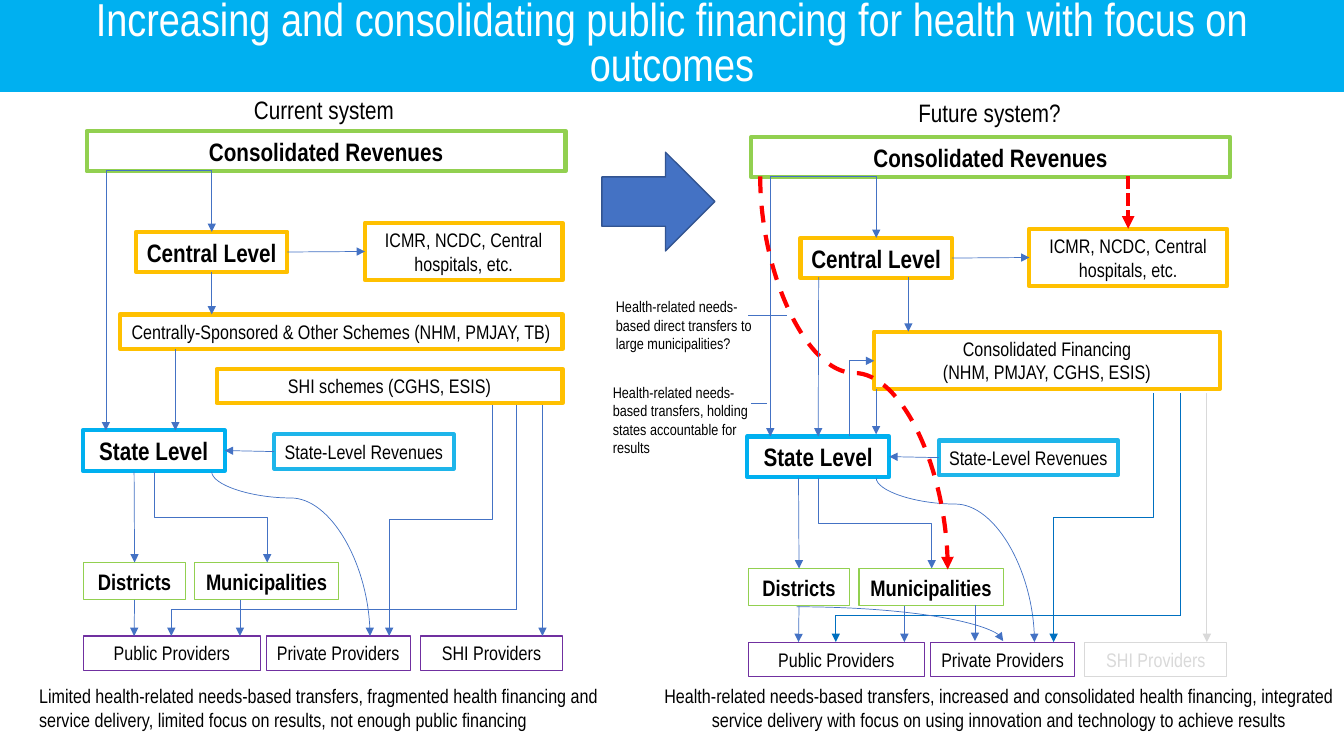
from dataclasses import dataclass
from typing import Any

from lxml.etree import SubElement
from pptx import Presentation
from pptx.dml.color import RGBColor
from pptx.enum.dml import MSO_LINE_DASH_STYLE as Dash
from pptx.enum.shapes import MSO_CONNECTOR as Wire
from pptx.enum.shapes import MSO_SHAPE as Preset
from pptx.enum.text import MSO_ANCHOR as Anchor
from pptx.enum.text import MSO_AUTO_SIZE as AutoSize
from pptx.enum.text import PP_ALIGN as Align
from pptx.oxml.ns import qn
from pptx.util import Inches, Pt

TOP, LEFT, BOTTOM, RIGHT = range(4)


@dataclass(frozen=True)
class Theme:
    font: str = "Arial Narrow"
    text: str = "000000"
    white: str = "FFFFFF"
    banner: str = "00B0F0"
    revenue: str = "92D050"
    central: str = "FFC000"
    state: str = "00B0F0"
    state_revenue: str = "1EB5EA"
    provider: str = "7030A0"
    faded: str = "D9D9D9"
    flow: str = "4472C4"
    arrow_edge: str = "325491"
    pooled_flow: str = "0070C0"
    direct_flow: str = "FF0000"
    title_size: int = 33
    level_size: int = 18
    local_size: int = 16
    body_size: int = 14
    note_size: int = 11
    thin: float = 0.5
    edge: float = 0.75
    thick: float = 3


THEME = Theme()


@dataclass
class Panel:
    page: Any
    dx: float = 0
    dy: float = 0

    def place(self, x, y):
        return Inches(x + self.dx), Inches(y + self.dy)


def color(value):
    return RGBColor.from_string(value)


def write(frame, text, size, ink=THEME.text, bold=False, align=Align.LEFT):
    frame.word_wrap = True
    frame.text = text
    for para in frame.paragraphs:
        para.alignment = align
        para.font.name = THEME.font
        para.font.size = Pt(size)
        para.font.bold = bold
        para.font.color.rgb = color(ink)


def add_title(page, text):
    title = page.shapes.title
    title.left, title.top = Inches(0), Inches(0)
    title.width, title.height = Inches(13.33), Inches(0.91)
    title.fill.solid()
    title.fill.fore_color.rgb = color(THEME.banner)
    title.line.color.rgb = color(THEME.banner)
    title.line.width = Pt(THEME.edge)
    frame = title.text_frame
    write(frame, text, THEME.title_size, THEME.white, align=Align.CENTER)
    frame.auto_size = AutoSize.NONE
    frame.vertical_anchor = Anchor.MIDDLE
    frame.paragraphs[0].line_spacing = 0.8


def add_box(panel, text, area, edge, size=THEME.body_size, bold=False,
            weight=THEME.thick, ink=THEME.text):
    x, y, width, height = area
    box = panel.page.shapes.add_shape(
        Preset.RECTANGLE, *panel.place(x, y), Inches(width), Inches(height))
    box.shadow.inherit = False
    box.fill.background()
    box.line.color.rgb = color(edge)
    box.line.width = Pt(weight)
    write(box.text_frame, text, size, ink, bold, Align.CENTER)
    return box


def add_label(page, text, area, size, align=Align.LEFT):
    label = page.shapes.add_textbox(*map(Inches, area))
    write(label.text_frame, text, size, align=align)
    label.text_frame.auto_size = AutoSize.SHAPE_TO_FIT_TEXT


def add_block_arrow(page):
    arrow = page.shapes.add_shape(
        Preset.RIGHT_ARROW, *map(Inches, (5.97, 1.51, 1.12, 0.98)))
    arrow.shadow.inherit = False
    arrow.fill.solid()
    arrow.fill.fore_color.rgb = color(THEME.flow)
    arrow.line.color.rgb = color(THEME.arrow_edge)
    arrow.line.width = Pt(1)


def add_flow(panel, start, end, kind=Wire.STRAIGHT, ink=THEME.flow,
             weight=THEME.thin, dash=None, head=True, down_first=False,
             preset=None, bend=None, source=None, target=None):
    (x1, y1), (x2, y2) = start, end
    if down_first:
        mid_x, mid_y = (x1 + x2) / 2, (y1 + y2) / 2
        half_x, half_y = (x2 - x1) / 2, (y2 - y1) / 2
        x1, y1 = mid_x - half_y, mid_y + half_x
        x2, y2 = mid_x + half_y, mid_y - half_x
    flow = panel.page.shapes.add_connector(
        kind, *panel.place(x1, y1), *panel.place(x2, y2))
    if source:
        flow.begin_connect(*source)
    if target:
        flow.end_connect(*target)
    flow.line.color.rgb = color(ink)
    flow.line.width = Pt(weight)
    if dash:
        flow.line.dash_style = dash
    props = flow.element.spPr
    if down_first:
        props.find(qn("a:xfrm")).set("rot", "5400000")
    geometry = props.find(qn("a:prstGeom"))
    if preset:
        geometry.set("prst", preset)
    if bend is not None:
        guides = geometry.find(qn("a:avLst"))
        if guides is None:
            guides = SubElement(geometry, qn("a:avLst"))
        SubElement(guides, qn("a:gd"), name="adj1", fmla=f"val {round(bend * 100000)}")
    if head:
        SubElement(props.find(qn("a:ln")), qn("a:tailEnd"), type="triangle")
    SubElement(props, qn("a:effectLst"))


def add_system(panel, shi_ink, shi_edge, shi_flow, pool_flow, pool_bottom, pool_x):
    def level(text, area, edge):
        return add_box(panel, text, area, edge, THEME.level_size, True)

    def local(text, area):
        return add_box(panel, text, area, THEME.revenue, THEME.local_size, True, THEME.edge)

    def provider(text, x, width, edge=THEME.provider, ink=THEME.text):
        add_box(panel, text, (x, 6.31, width, 0.34), edge, weight=THEME.edge, ink=ink)

    level("Consolidated Revenues", (0.86, 1.3, 4.75, 0.4), THEME.revenue)
    state = level("State Level", (0.82, 4.27, 1.41, 0.4), THEME.state)
    central = level("Central Level", (1.35, 2.3, 1.5, 0.4), THEME.central)
    institutes = add_box(panel, "ICMR, NCDC, Central hospitals, etc.",
                         (3.62, 2.21, 1.96, 0.57), THEME.central)
    state_revenues = add_box(panel, "State-Level Revenues",
                             (2.72, 4.31, 1.78, 0.34), THEME.state_revenue)
    districts = local("Districts", (0.83, 5.58, 1.01, 0.37))
    local("Municipalities", (1.93, 5.58, 1.43, 0.37))
    provider("Public Providers", 0.83, 1.75)
    provider("Private Providers", 2.64, 1.43)
    provider("SHI Providers", 4.17, 1.41, shi_edge, shi_ink)

    add_flow(panel, (1.05, 1.69), (1.05, 4.27))
    add_flow(panel, (1.05, 1.69), (2.1, 2.3), Wire.ELBOW, preset="bentConnector2")
    add_flow(panel, (2.85, 2.5), (3.62, 2.5), source=(central, RIGHT), target=(institutes, LEFT))
    add_flow(panel, (2.72, 4.48), (2.23, 4.48), source=(state_revenues, LEFT), target=(state, RIGHT))
    add_flow(panel, (1.33, 4.68), (1.33, 5.58), target=(districts, TOP))
    add_flow(panel, (1.33, 5.95), (1.33, 6.31), source=(districts, BOTTOM))
    add_flow(panel, (2.38, 5.95), (2.38, 6.31))
    add_flow(panel, (1.53, 4.68), (2.65, 5.58), Wire.ELBOW, down_first=True)
    add_flow(panel, (2.1, 4.68), (3.67, 6.31), Wire.CURVE, down_first=True, bend=0.16)
    add_flow(panel, (5.38, pool_bottom), (5.38, 6.31), ink=shi_flow)
    add_flow(panel, (pool_x, pool_bottom), (3.86, 6.31), Wire.ELBOW, pool_flow, down_first=True)
    add_flow(panel, (5.12, pool_bottom), (5.12, 6.05), ink=pool_flow, head=False)
    add_flow(panel, (5.12, 6.05), (1.7, 6.31), Wire.ELBOW, pool_flow, preset="bentConnector2")
    return central, state, institutes


def add_current_system(page):
    panel = Panel(page)
    central, _, _ = add_system(panel, THEME.text, THEME.provider, THEME.flow, THEME.flow, 4, 4.88)
    add_box(panel, "Centrally-Sponsored & Other Schemes (NHM, PMJAY, TB)",
            (1.19, 3.12, 4.39, 0.34), THEME.central)
    add_box(panel, "SHI schemes (CGHS, ESIS)", (2.15, 3.66, 3.43, 0.34), THEME.central)
    add_flow(panel, (2.1, 2.7), (2.1, 3.12), source=(central, BOTTOM))
    add_flow(panel, (1.74, 3.46), (1.74, 4.27))
    add_label(page, "Current system", (2.42, 0.89, 1.63, 0.4), THEME.level_size)
    add_label(page, "Limited health-related needs-based transfers, fragmented health financing and service delivery, limited focus on results, not enough public financing",
              (0.29, 6.74, 6.14, 0.57), THEME.body_size)


def add_future_system(page):
    _, state, institutes = add_system(
        Panel(page, 6.59, 0.06), THEME.faded, THEME.faded, THEME.faded, THEME.pooled_flow, 3.84, 4.85)
    panel = Panel(page)
    pool = add_box(panel, "Consolidated Financing\n(NHM, PMJAY, CGHS, ESIS)",
                   (8.67, 3.29, 3.43, 0.57), THEME.central)
    add_label(page, "Future system?", (9.01, 0.92, 1.63, 0.4), THEME.level_size)
    add_label(page, "Health-related needs-based transfers, increased and consolidated health financing, integrated service delivery with focus on using innovation and technology to achieve results",
              (6.49, 6.74, 6.84, 0.57), THEME.body_size, Align.CENTER)
    add_flow(panel, (11.19, 1.75), (11.19, 2.27), ink=THEME.direct_flow, weight=THEME.thick,
             dash=Dash.SQUARE_DOT, target=(institutes, TOP))
    add_flow(panel, (7.54, 1.75), (9.4, 5.65), Wire.CURVE, THEME.direct_flow, THEME.thick,
             Dash.DASH, down_first=True)
    add_flow(panel, (9.67, 6), (9.67, 6.36))
    add_flow(panel, (7.9, 6.02), (9.95, 6.36), Wire.CURVE, preset="curvedConnector2")
    add_flow(panel, (9.01, 2.75), (9.01, 3.29))
    add_flow(panel, (8.12, 2.75), (8.12, 4.33), target=(state, TOP))
    add_flow(panel, (8.42, 4.33), (8.67, 3.58), Wire.ELBOW, down_first=True, preset="bentConnector2")
    add_flow(panel, (8.69, 3.86), (8.69, 4.31))
    add_label(page, "Health-related needs-based transfers, holding states accountable for results",
              (5.98, 3.75, 1.56, 0.84), THEME.note_size)
    add_flow(panel, (7.45, 4), (7.61, 4), head=False)
    add_label(page, "Health-related needs-based direct transfers to large municipalities?",
              (6.01, 2.9, 1.55, 0.66), THEME.note_size)
    add_flow(panel, (7.42, 3.13), (7.81, 3.13), head=False)


def main():
    deck = Presentation()
    deck.slide_width, deck.slide_height = Inches(13.33), Inches(7.5)
    page = deck.slides.add_slide(deck.slide_layouts[5])
    add_title(page, "Increasing and consolidating public financing for health with focus on outcomes")
    add_current_system(page)
    add_future_system(page)
    add_block_arrow(page)
    deck.save("out.pptx")


if __name__ == "__main__":
    main()
